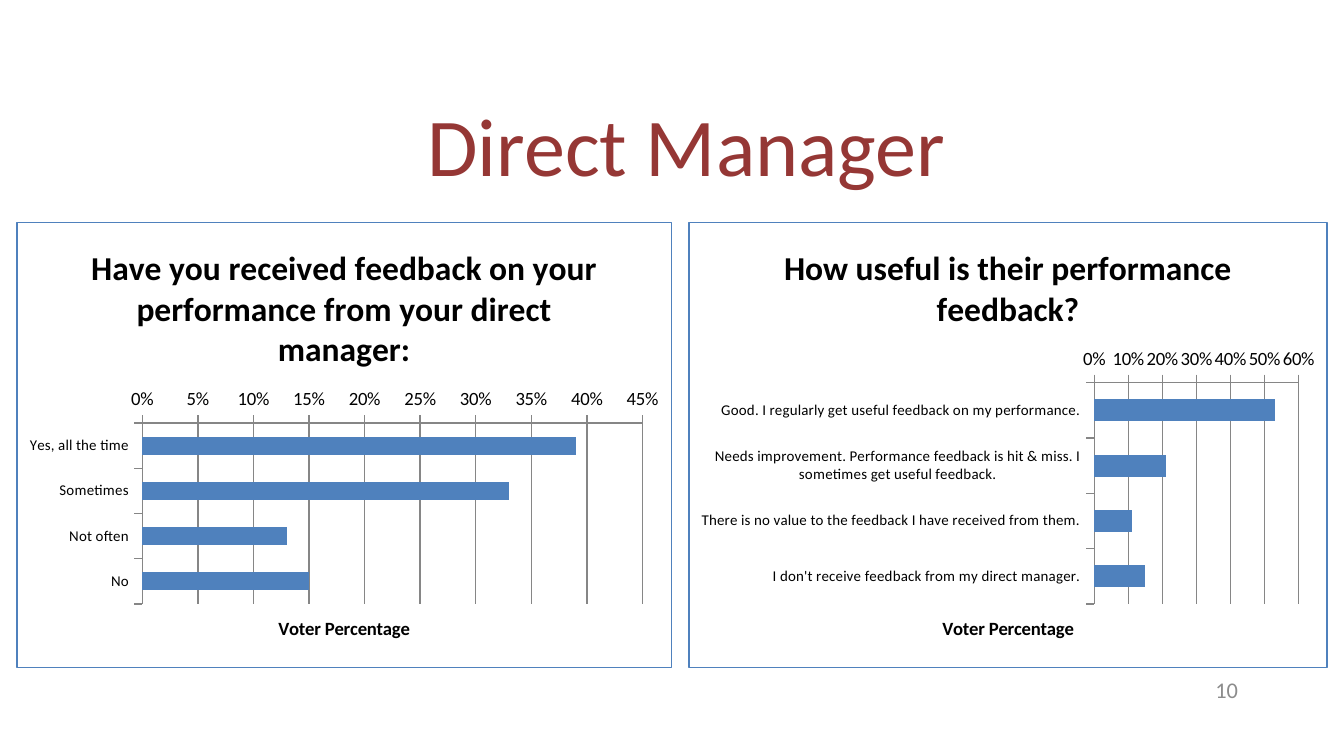
from dataclasses import dataclass

from pptx import Presentation
from pptx import oxml
from pptx.chart import data as cd
from pptx.dml.color import RGBColor
from pptx.enum import chart as ce, text
from pptx.util import Inches, Pt

FONT = "Calibri"
BLUE, GREY, BLACK = "4F81BD", "868686", "000000"
NS = ('xmlns:c="http://schemas.openxmlformats.org/drawingml/2006/chart" '
      'xmlns:a="http://schemas.openxmlformats.org/drawingml/2006/main"')


@dataclass
class Label:
    words: str
    box: tuple[float, float, float, float]
    size: int
    color: str
    align: text.PP_ALIGN
    spacing: float = 1.0


@dataclass
class Poll:
    question: str
    left: float
    width: float
    answers: dict[str, float]


LABELS = [
    Label("Direct Manager", (0.8, 0.57, 8.62, 1.09), 44, "953735",
          text.PP_ALIGN.CENTER, 0.9),
    Label("10", (7.06, 4.98, 2.25, 0.3), 12, "8C8C8C", text.PP_ALIGN.RIGHT),
]
POLLS = [
    Poll("How useful is their performance feedback?", 5.12, 4.76, {
        "Good. I regularly get useful feedback on my performance.": 0.53,
        "Needs improvement. Performance feedback is hit & miss. "
        "I sometimes get useful feedback.": 0.21,
        "There is no value to the feedback I have received from them.": 0.11,
        "I don't receive feedback from my direct manager.": 0.15,
    }),
    Poll("Have you received feedback on your performance from your direct manager:",
         0.12, 4.88, {
             "Yes, all the time": 0.39,
             "Sometimes": 0.33,
             "Not often": 0.13,
             "No": 0.15,
         }),
]


def rgb(color: str) -> RGBColor:
    return RGBColor.from_string(color)


def style(font, size: int, color: str, bold: bool = False) -> None:
    font.name, font.size, font.bold = FONT, Pt(size), bold
    font.color.rgb = rgb(color)


def style_line(line, color: str) -> None:
    line.color.rgb = rgb(color)
    line.width = Pt(0.75)


def add_label(s, label: Label) -> None:
    tf = s.shapes.add_textbox(*map(Inches, label.box)).text_frame
    tf.word_wrap = True
    tf.vertical_anchor = text.MSO_ANCHOR.MIDDLE
    p = tf.paragraphs[0]
    p.alignment, p.line_spacing = label.align, label.spacing
    r = p.add_run()
    r.text = label.words
    style(r.font, label.size, label.color)


def set_title(owner, words: str, size: int) -> None:
    """Give a chart or an axis a bold title."""
    r = owner.text_frame.paragraphs[0].add_run()
    r.text = words
    style(r.font, size, BLACK, bold=True)


def add_border(chart, color: str) -> None:
    """Frame the whole chart area with a thin line."""
    frame = oxml.parse_xml(
        f'<c:spPr {NS}><a:noFill/><a:ln w="{Pt(0.75)}"><a:solidFill>'
        f'<a:srgbClr val="{color}"/></a:solidFill></a:ln></c:spPr>')
    chart.element.chart.addnext(frame)


def add_poll(s, poll: Poll) -> None:
    data = cd.CategoryChartData(number_format="0%")
    data.categories = list(poll.answers)
    data.add_series("Series 1", list(poll.answers.values()))
    chart = s.shapes.add_chart(
        ce.XL_CHART_TYPE.BAR_CLUSTERED, Inches(poll.left), Inches(1.65),
        Inches(poll.width), Inches(3.32), data).chart
    style(chart.font, 10, BLACK)
    chart.has_legend = False
    set_title(chart.chart_title, poll.question, 18)
    chart.chart_title.include_in_layout = False
    add_border(chart, BLUE)

    # Bars
    plot = chart.plots[0]
    plot.gap_width, plot.vary_by_categories = 150, False
    fill = plot.series[0].format.fill
    fill.solid()
    fill.fore_color.rgb = rgb(BLUE)

    # Axes
    answers, votes = chart.category_axis, chart.value_axis
    for axis, size in ((answers, 8), (votes, 10)):
        axis.major_tick_mark = ce.XL_TICK_MARK.OUTSIDE
        axis.minor_tick_mark = ce.XL_TICK_MARK.NONE
        style(axis.tick_labels.font, size, BLACK)
        style_line(axis.format.line, GREY)
    answers.reverse_order = True
    votes.has_major_gridlines = True
    style_line(votes.major_gridlines.format.line, GREY)
    votes.tick_labels.number_format = "0%"
    votes.tick_labels.number_format_is_linked = False
    set_title(votes.axis_title, "Voter Percentage", 10)


def main() -> None:
    prs = Presentation()
    # Widescreen, 16:9
    prs.slide_width, prs.slide_height = Inches(10), Inches(10 * 9 / 16)
    s = prs.slides.add_slide(prs.slide_layouts[6])
    # Heading and page number
    for label in LABELS:
        add_label(s, label)
    # Poll results
    for poll in POLLS:
        add_poll(s, poll)
    prs.save("out.pptx")


if __name__ == "__main__":
    main()
